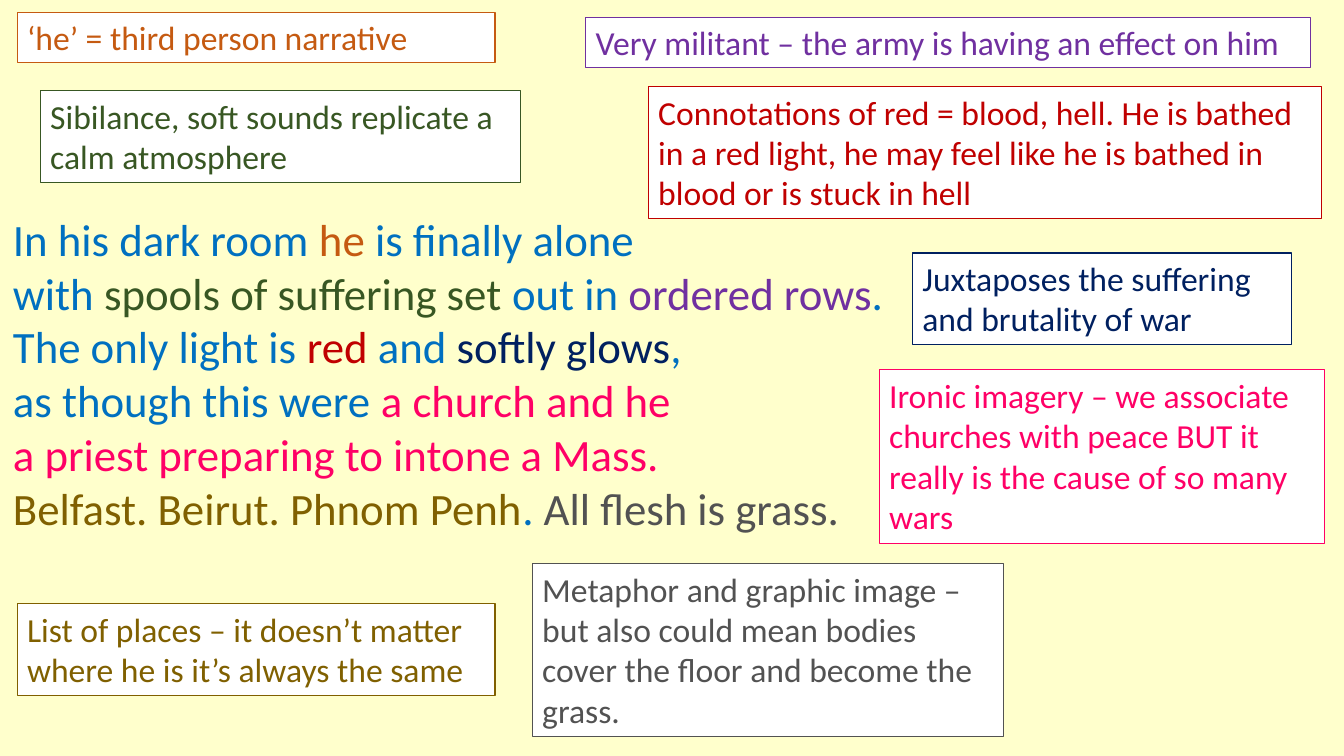
from pptx import Presentation
from pptx.dml.color import RGBColor
from pptx.enum import shapes, text
from pptx.util import Inches, Pt

BLUE, ORANGE, GREEN, PURPLE = "0070C0", "C55A11", "385723", "7030A0"
RED, NAVY, PINK, BROWN, GREY = "C00000", "002060", "FF0066", "806000", "525252"

POEM = [
    [("In his dark room ", BLUE), ("he", ORANGE), (" is finally alone", BLUE)],
    [("with ", BLUE), ("spools of suffering set", GREEN), (" out in ", BLUE),
     ("ordered rows", PURPLE), (".", BLUE)],
    [("The only light is ", BLUE), ("red", RED), (" and ", BLUE),
     ("softly glows", NAVY), (",", BLUE)],
    [("as though this were ", BLUE), ("a church and he", PINK)],
    [("a priest preparing to intone a Mass.", PINK)],
    [("Belfast. Beirut. Phnom Penh", BROWN), (". ", BLUE),
     ("All flesh is grass.", GREY)],
]

NOTES = [
    ((0.17, 0.12, 4.74, 0.5), ORANGE, "‘he’ = third person narrative"),
    ((0.4, 0.9, 4.76, 0.91), GREEN,
     "Sibilance, soft sounds replicate a calm atmosphere"),
    ((5.81, 0.17, 7.19, 0.5), PURPLE,
     "Very militant – the army is having an effect on him"),
    ((6.43, 0.86, 6.68, 1.31), RED,
     "Connotations of red = blood, hell. He is bathed in a red light, "
     "he may feel like he is bathed in blood or is stuck in hell"),
    ((9.05, 2.51, 3.76, 0.91), NAVY,
     "Juxtaposes the suffering and brutality of war"),
    ((8.72, 3.67, 4.42, 1.72), PINK,
     "Ironic imagery – we associate churches with peace BUT it really is "
     "the cause of so many wars"),
    ((0.17, 5.99, 4.74, 0.91), BROWN,
     "List of places – it doesn’t matter where he is it’s always the same"),
    ((5.28, 5.59, 4.67, 1.72), GREY,
     "Metaphor and graphic image – but also could mean bodies cover the "
     "floor and become the grass."),
]


def paint(fill, color):
    fill.solid()
    fill.fore_color.rgb = RGBColor.from_string(color)


def style(run, size, color):
    run.font.name = "Calibri"
    run.font.size = Pt(size)
    paint(run.font.fill, color)


def add_poem(slide, box, lines):
    frame = slide.shapes.add_textbox(*map(Inches, box)).text_frame
    frame.word_wrap = True
    for i, line in enumerate(lines):
        para = frame.add_paragraph() if i else frame.paragraphs[0]
        for words, color in line:
            run = para.add_run()
            run.text = words
            style(run, 32, color)


def add_note(slide, box, color, words):
    note = slide.shapes.add_shape(shapes.MSO_SHAPE.RECTANGLE, *map(Inches, box))
    note.shadow.inherit = False
    paint(note.fill, "FFFFFF")
    paint(note.line.fill, color)
    note.line.width = Pt(0.75)
    frame = note.text_frame
    frame.word_wrap = True
    frame.auto_size = text.MSO_AUTO_SIZE.SHAPE_TO_FIT_TEXT
    frame.vertical_anchor = text.MSO_ANCHOR.TOP
    frame.text = words
    para = frame.paragraphs[0]
    para.alignment = text.PP_ALIGN.LEFT
    style(para.runs[0], 24, color)


def main():
    deck = Presentation()
    deck.slide_width, deck.slide_height = Inches(13.33), Inches(7.5)
    slide = deck.slides.add_slide(deck.slide_layouts[6])
    paint(slide.background.fill, "FFFFCC")
    add_poem(slide, (0.03, 2.05, 10.22, 4.95), POEM)
    for box, color, words in NOTES:
        add_note(slide, box, color, words)
    deck.save("out.pptx")


if __name__ == "__main__":
    main()
